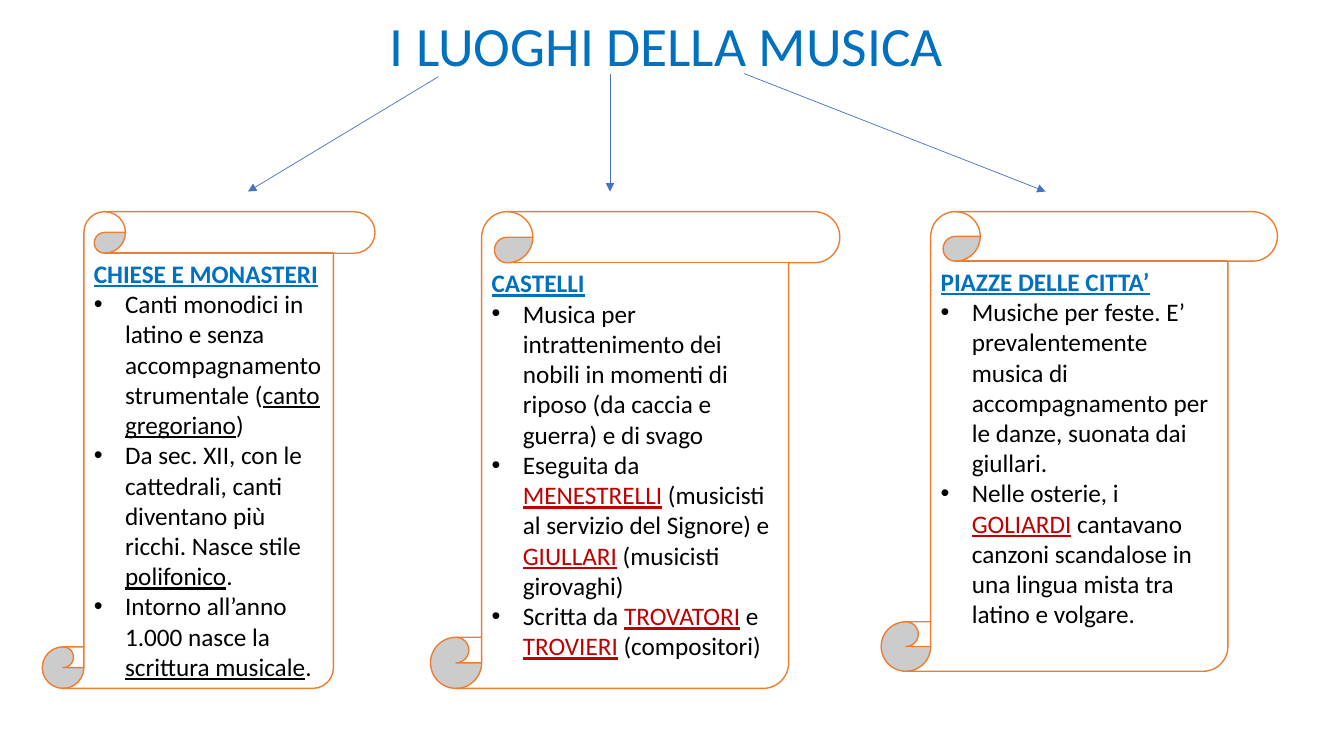
"""Build a slide on the places of medieval music, with three scrolls under a title."""
from lxml.etree import SubElement
from pptx import Presentation
from pptx.dml.color import RGBColor
from pptx.enum.shapes import MSO_CONNECTOR, MSO_SHAPE
from pptx.enum.text import MSO_ANCHOR, MSO_AUTO_SIZE, PP_ALIGN
from pptx.oxml.ns import qn
from pptx.util import Inches, Pt

FONT = "Calibri"
BLUE, RED, BLACK, WHITE = "0070C0", "C00000", "000000", "FFFFFF"
SCROLL_LINE, ARROW_LINE = "ED7D31", "4472C4"
SCROLL_TOP, ARROW_END = 2.1, 1.9
INDENT = Inches(0.31)

TITLE = "I LUOGHI DELLA MUSICA"
# Underscores enclose the underlined words.
SCROLLS = [
    {"heading": "CHIESE E MONASTERI", "left": 0.42, "width": 3.3, "height": 4.73, "accent": BLACK,
     "items": [
         "Canti monodici in latino e senza accompagnamento strumentale (_canto gregoriano_)",
         "Da sec. XII, con le cattedrali, canti diventano più ricchi. Nasce stile _polifonico_.",
         "Intorno all’anno 1.000 nasce la _scrittura musicale_."]},
    {"heading": "CASTELLI", "left": 4.27, "width": 4.06, "height": 4.73, "accent": RED,
     "items": [
         "Musica per intrattenimento dei nobili in momenti di riposo (da caccia e guerra) e di svago",
         "Eseguita da _MENESTRELLI_ (musicisti al servizio del Signore) e "
         "_GIULLARI_ (musicisti girovaghi)",
         "Scritta da _TROVATORI_ e _TROVIERI_ (compositori)"]},
    {"heading": "PIAZZE DELLE CITTA’", "left": 8.74, "width": 3.93, "height": 4.56, "accent": RED,
     "items": [
         "Musiche per feste. E’ prevalentemente musica di accompagnamento per le danze, "
         "suonata dai giullari.",
         "Nelle osterie, i _GOLIARDI_ cantavano canzoni scandalose in una lingua mista "
         "tra latino e volgare."]},
]
ARROWS = [(4.35, 0.76, 2.46), (6.05, 0.73, 6.05), (7.38, 0.73, 10.37)]


def color(hex_string):
    return RGBColor.from_string(hex_string)


def add_run(paragraph, text, size, hex_string, bold=False, underline=False):
    run = paragraph.add_run()
    run.text = text
    run.font.name = FONT
    run.font.size = Pt(size)
    run.font.bold = bold
    run.font.underline = underline
    run.font.color.rgb = color(hex_string)


def add_bullet(paragraph):
    properties = paragraph._p.get_or_add_pPr()
    properties.set("marL", str(INDENT))
    properties.set("indent", str(-INDENT))
    SubElement(properties, qn("a:buFont")).set("typeface", "Arial")
    SubElement(properties, qn("a:buChar")).set("char", "•")


def add_scroll(slide, scroll):
    shape = slide.shapes.add_shape(
        MSO_SHAPE.VERTICAL_SCROLL, Inches(scroll["left"]), Inches(SCROLL_TOP),
        Inches(scroll["width"]), Inches(scroll["height"]))
    shape.shadow.inherit = False
    shape.fill.solid()
    shape.fill.fore_color.rgb = color(WHITE)
    shape.line.color.rgb = color(SCROLL_LINE)
    shape.line.width = Pt(1)
    frame = shape.text_frame
    frame.word_wrap = True
    frame.vertical_anchor = MSO_ANCHOR.TOP
    heading = frame.paragraphs[0]
    heading.alignment = PP_ALIGN.LEFT
    add_run(heading, scroll["heading"], 18, BLUE, bold=True, underline=True)
    for item in scroll["items"]:
        paragraph = frame.add_paragraph()
        paragraph.alignment = PP_ALIGN.LEFT
        add_bullet(paragraph)
        for index, text in enumerate(item.split("_")):
            underlined = index % 2 == 1
            add_run(paragraph, text, 18, scroll["accent"] if underlined else BLACK,
                    underline=underlined)


def add_arrow(slide, start_x, start_y, end_x):
    arrow = slide.shapes.add_connector(
        MSO_CONNECTOR.STRAIGHT, Inches(start_x), Inches(start_y),
        Inches(end_x), Inches(ARROW_END))
    arrow.line.color.rgb = color(ARROW_LINE)
    arrow.line.width = Pt(0.5)
    SubElement(arrow.line._get_or_add_ln(), qn("a:tailEnd")).set("type", "triangle")
    SubElement(arrow._element.spPr, qn("a:effectLst"))


def add_title(slide):
    title = slide.shapes.title
    title.left, title.top = Inches(0.92), Inches(0.24)
    title.width, title.height = Inches(11.38), Inches(0.49)
    frame = title.text_frame
    frame.auto_size = MSO_AUTO_SIZE.NONE
    frame.vertical_anchor = MSO_ANCHOR.MIDDLE
    paragraph = frame.paragraphs[0]
    paragraph.alignment = PP_ALIGN.CENTER
    paragraph.line_spacing = 0.9
    add_run(paragraph, TITLE, 39.6, BLUE)


def main():
    presentation = Presentation()
    presentation.slide_width = Inches(13.33)
    presentation.slide_height = Inches(7.5)
    slide = presentation.slides.add_slide(presentation.slide_layouts[5])
    add_title(slide)
    for scroll in SCROLLS:
        add_scroll(slide, scroll)
    for arrow in ARROWS:
        add_arrow(slide, *arrow)
    presentation.save("out.pptx")


if __name__ == "__main__":
    main()
